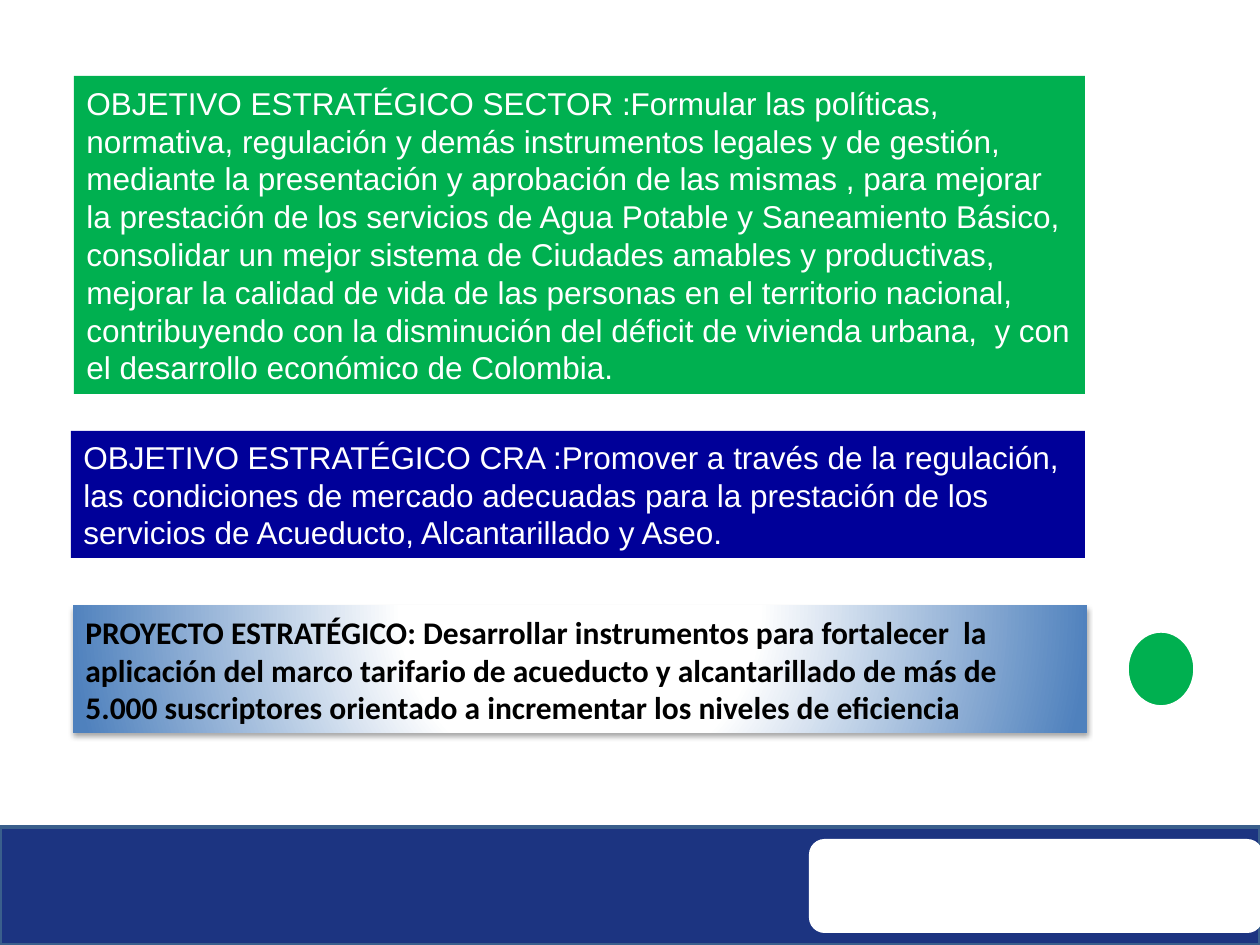
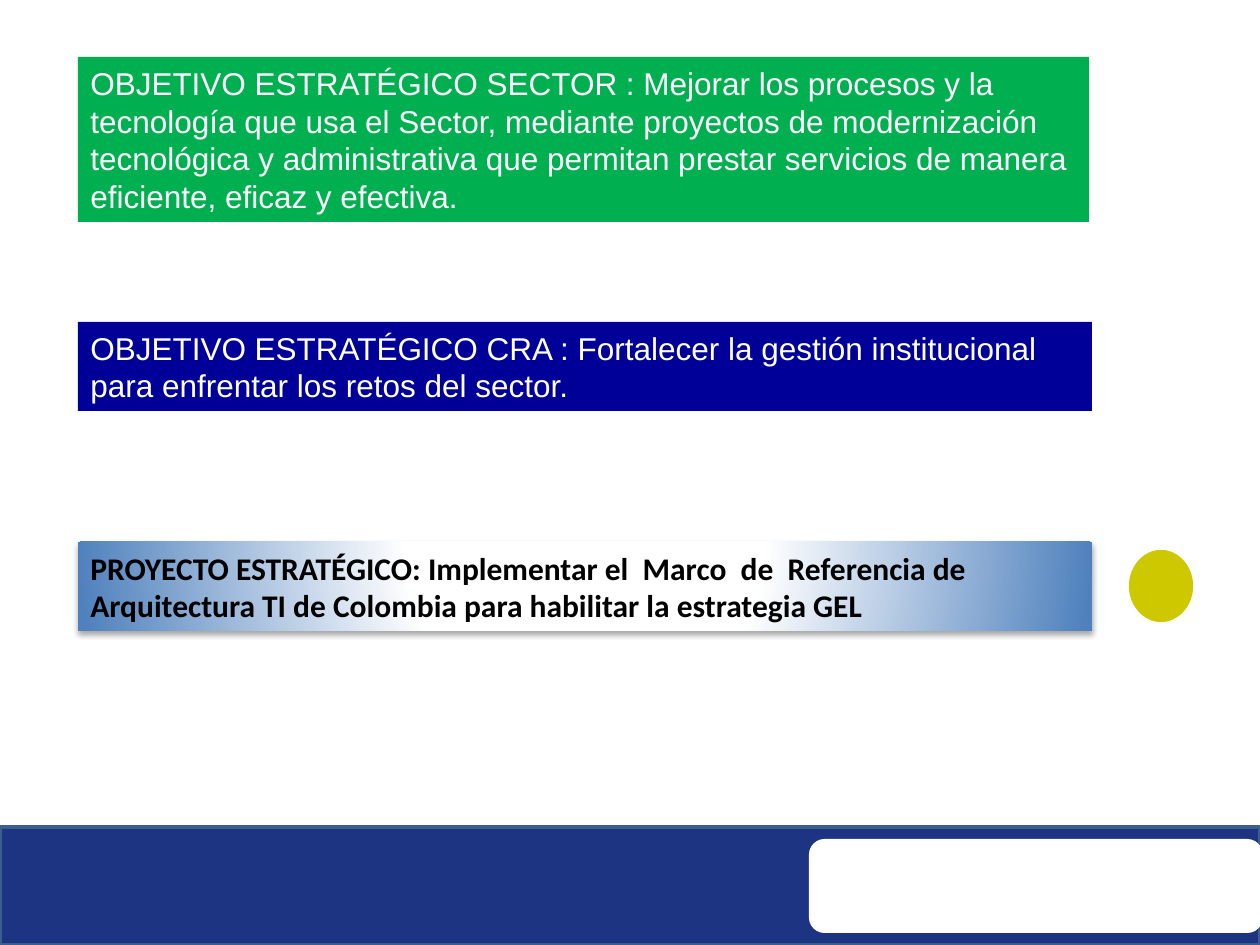
from lxml.etree import fromstring
from pptx import Presentation
from pptx.dml.color import RGBColor
from pptx.enum.shapes import MSO_SHAPE
from pptx.enum.text import MSO_ANCHOR, PP_ALIGN
from pptx.oxml.ns import qn
from pptx.util import Pt

EMU_PER_PX = 914400 / 126
SLIDE_WIDTH, SLIDE_HEIGHT = 1260, 945

WHITE, BLACK = "FFFFFF", "000000"
BAND_BLUE, BAND_EDGE = "1C3481", "3A5F8C"
SECTOR_GREEN, CRA_BLUE, PROJECT_BLUE = "00B050", "000099", "4F81BD"
STATUS_YELLOW = "CDC800"

DRAWING_NS = 'xmlns:a="http://schemas.openxmlformats.org/drawingml/2006/main"'
PROJECT_GRADIENT = f"""<a:gradFill {DRAWING_NS} rotWithShape="1"><a:gsLst>
<a:gs pos="0"><a:srgbClr val="{WHITE}"/></a:gs>
<a:gs pos="35000"><a:srgbClr val="{WHITE}"/></a:gs>
<a:gs pos="100000"><a:srgbClr val="{PROJECT_BLUE}"/></a:gs></a:gsLst>
<a:path path="circle"><a:fillToRect l="50000" t="-80000" r="50000" b="180000"/></a:path>
</a:gradFill>"""
PROJECT_SHADOW = f"""<a:outerShdw {DRAWING_NS} blurRad="40000" dist="23000" dir="5400000"
rotWithShape="0"><a:srgbClr val="{BLACK}"><a:alpha val="35000"/></a:srgbClr></a:outerShdw>"""

# Boxes are left, top, width, height in px
SLIDES = [
    {
        "sector": ((74, 76, 1011, 318),
                   "OBJETIVO ESTRATÉGICO SECTOR :Formular las políticas, normativa, regulación y "
                   "demás instrumentos legales y de gestión, mediante la presentación y aprobación "
                   "de las mismas , para mejorar la prestación de los servicios de Agua Potable y "
                   "Saneamiento Básico, consolidar un mejor sistema de Ciudades amables y "
                   "productivas, mejorar la calidad de vida de las personas en el territorio "
                   "nacional, contribuyendo con la disminución del déficit de vivienda urbana,  y "
                   "con el desarrollo económico de Colombia."),
        "cra": ((71, 431, 1014, 127),
                "OBJETIVO ESTRATÉGICO CRA :Promover a través de la regulación, las condiciones de "
                "mercado adecuadas para la prestación de los servicios de Acueducto, "
                "Alcantarillado y Aseo."),
        "project": ((73, 606, 1014, 127),
                    "PROYECTO ESTRATÉGICO: Desarrollar instrumentos para fortalecer  la aplicación "
                    "del marco tarifario de acueducto y alcantarillado de más de 5.000 "
                    "suscriptores orientado a incrementar los niveles de eficiencia"),
        "status": SECTOR_GREEN,
    },
    {
        "sector": ((78, 57, 1011, 165),
                   "OBJETIVO ESTRATÉGICO SECTOR : Mejorar los procesos y la tecnología que usa el "
                   "Sector, mediante proyectos de modernización tecnológica y administrativa que "
                   "permitan prestar servicios de manera eficiente, eficaz y efectiva."),
        "cra": ((78, 322, 1014, 89),
                "OBJETIVO ESTRATÉGICO CRA : Fortalecer la gestión institucional para enfrentar "
                "los retos del sector."),
        "project": ((78, 542, 1014, 89),
                    "PROYECTO ESTRATÉGICO: Implementar el  Marco  de  Referencia de Arquitectura "
                    "TI de Colombia para habilitar la estrategia GEL"),
        "status": STATUS_YELLOW,
    },
]


def px(length):
    return round(length * EMU_PER_PX)


def colour(hex_code):
    return RGBColor.from_string(hex_code)


def add_block(slide, kind, box, fill, edge=None):
    shape = slide.shapes.add_shape(kind, *map(px, box))
    shape.shadow.inherit = False
    shape.fill.solid()
    shape.fill.fore_color.rgb = colour(fill)
    if edge:
        shape.line.color.rgb = colour(edge)
        shape.line.width = Pt(2)
    else:
        shape.line.fill.background()
    return shape


def add_statement(slide, box, text, fill, text_colour=WHITE, font_name="Arial", bold=False):
    shape = add_block(slide, MSO_SHAPE.RECTANGLE, box, fill)
    frame = shape.text_frame
    frame.word_wrap = True
    frame.vertical_anchor = MSO_ANCHOR.MIDDLE
    paragraph = frame.paragraphs[0]
    paragraph.alignment = PP_ALIGN.LEFT
    run = paragraph.add_run()
    run.text = text
    run.font.name = font_name
    run.font.size = Pt(18)
    run.font.bold = bold
    run.font.color.rgb = colour(text_colour)
    return shape


def add_footer(slide, box):
    left, top, width, height = box
    add_block(slide, MSO_SHAPE.RECTANGLE, box, BAND_BLUE, BAND_EDGE)
    # White panel at the right end of the band
    panel = (left + width - 451, top + 12, 454, height - 24)
    add_block(slide, MSO_SHAPE.ROUNDED_RECTANGLE, panel, WHITE)


def add_project(slide, box, text, status):
    # Project statement with radial gradient and soft shadow
    shape = add_statement(slide, box, text, WHITE, BLACK, "Calibri", True)
    properties = shape.element.spPr
    properties.replace(properties.find(qn("a:solidFill")), fromstring(PROJECT_GRADIENT))
    properties.find(qn("a:effectLst")).append(fromstring(PROJECT_SHADOW))

    # Status light, centred on the statement's height
    top, height = box[1], box[3]
    light_height = 76
    light = (1127, top + (height - light_height) // 2, 68, light_height)
    add_block(slide, MSO_SHAPE.OVAL, light, status, WHITE)


def add_objective_slide(presentation, content):
    slide = presentation.slides.add_slide(presentation.slide_layouts[6])
    add_footer(slide, (0, 827, SLIDE_WIDTH, 118))
    add_project(slide, *content["project"], content["status"])
    add_statement(slide, *content["cra"], CRA_BLUE)
    add_statement(slide, *content["sector"], SECTOR_GREEN)


def main():
    presentation = Presentation()
    presentation.slide_width = px(SLIDE_WIDTH)
    presentation.slide_height = px(SLIDE_HEIGHT)
    for content in SLIDES:
        add_objective_slide(presentation, content)
    presentation.save("out.pptx")


if __name__ == "__main__":
    main()
